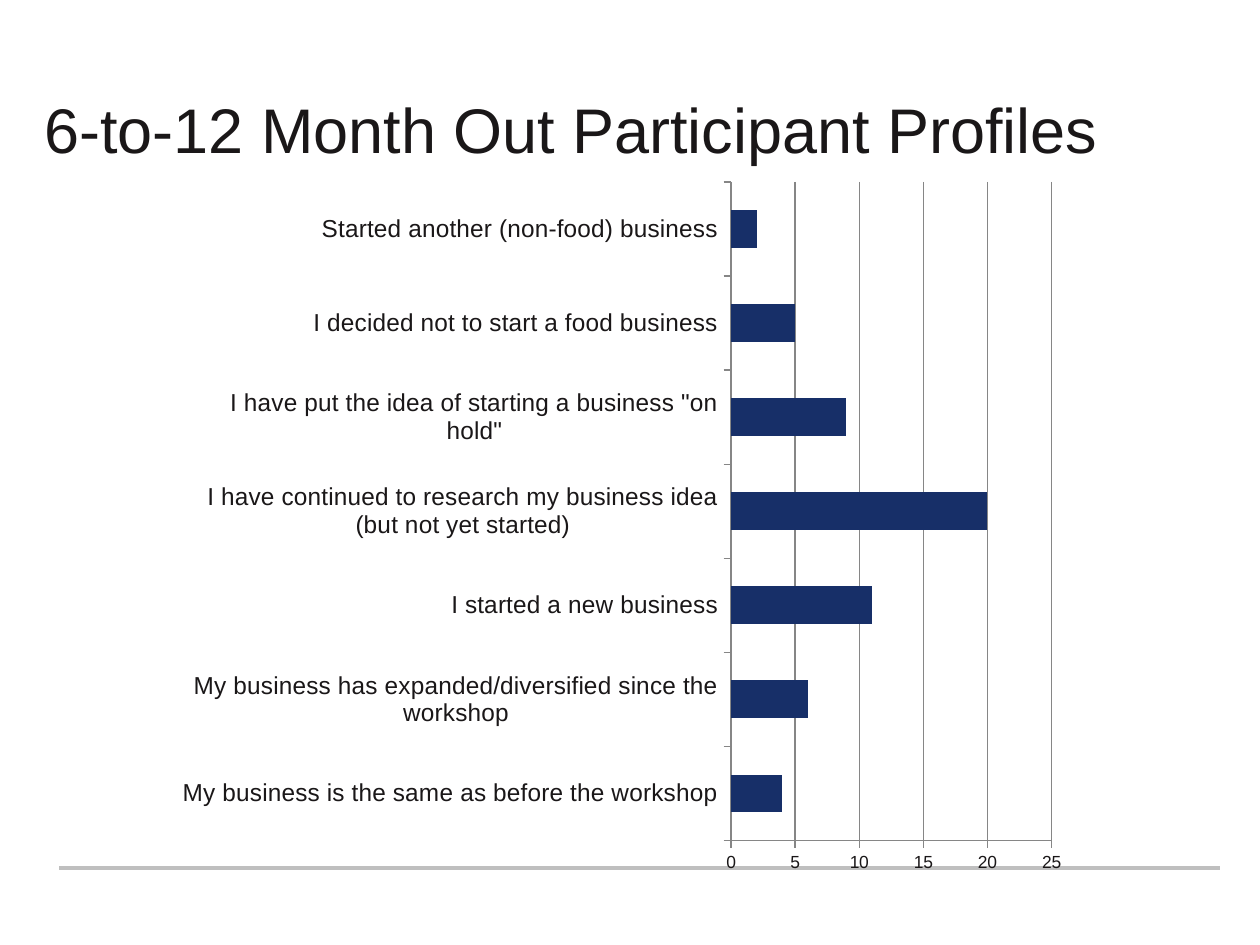
from lxml import etree
from pptx import Presentation
from pptx.chart.data import CategoryChartData
from pptx.dml.color import RGBColor
from pptx.enum.chart import XL_CHART_TYPE as ChartType, XL_TICK_MARK as TickMark
from pptx.enum.shapes import MSO_CONNECTOR as Connector
from pptx.oxml import parse_xml
from pptx.oxml.ns import nsdecls, qn
from pptx.util import Cm, Pt

INK = RGBColor(0x1A, 0x17, 0x18)
NAVY = RGBColor(0x17, 0x2F, 0x68)
RULE_GRAY = RGBColor(0xBF, 0xBF, 0xBF)
AXIS_GRAY = RGBColor(0x86, 0x86, 0x86)
FONT = "Arial"

PROFILES = [
    ("My business is the same as before the workshop", 4),
    ("My business has expanded/diversified since the workshop", 6),
    ("I started a new business", 11),
    ("I have continued to research my business idea (but not yet started)", 20),
    ('I have put the idea of starting a business "on hold"', 9),
    ("I decided not to start a food business", 5),
    ("Started another (non-food) business", 2),
]


def style_font(font, size):
    font.name = FONT
    font.size = Pt(size)
    font.bold = False
    font.color.rgb = INK


def style_line(line, color, width):
    line.color.rgb = color
    line.width = Pt(width)


def add_rule(slide):
    rule = slide.shapes.add_connector(
        Connector.STRAIGHT, Cm(1.19), Cm(17.5), Cm(24.59), Cm(17.5))
    style_line(rule.line, RULE_GRAY, 2.25)
    etree.SubElement(rule._element.spPr, qn("a:effectLst"))


def add_title(slide, text):
    box = slide.shapes.add_textbox(Cm(0.64), Cm(1.7), Cm(24.76), Cm(1.8))
    box.text_frame.word_wrap = True
    box.text_frame.text = text
    style_font(box.text_frame.paragraphs[0].runs[0].font, 36)


def set_plot_area(chart, x, y, width, height):
    """Fix the inner plot area, in fractions of the chart."""
    plot_area = chart._chartSpace.chart.plotArea
    for layout in plot_area.findall(qn("c:layout")):
        plot_area.remove(layout)
    plot_area.insert(0, parse_xml(
        f'<c:layout {nsdecls("c")}><c:manualLayout>'
        '<c:layoutTarget val="inner"/><c:xMode val="edge"/><c:yMode val="edge"/>'
        f'<c:x val="{x}"/><c:y val="{y}"/><c:w val="{width}"/><c:h val="{height}"/>'
        '</c:manualLayout></c:layout>'))


def style_axis(axis, size):
    axis.major_tick_mark = TickMark.OUTSIDE
    axis.minor_tick_mark = TickMark.NONE
    style_line(axis.format.line, AXIS_GRAY, 0.75)
    style_font(axis.tick_labels.font, size)


def add_profile_chart(slide):
    data = CategoryChartData()
    data.categories = [label for label, _ in PROFILES]
    data.add_series("Series 1", [count for _, count in PROFILES])
    chart = slide.shapes.add_chart(
        ChartType.BAR_CLUSTERED, Cm(3.68), Cm(3.38), Cm(18.06), Cm(14.43), data).chart
    chart.has_legend = False
    chart.has_title = False
    style_font(chart.font, 10)
    set_plot_area(chart, 0.61, 0.02, 0.36, 0.92)

    # Axes and gridlines
    style_axis(chart.category_axis, 14)
    value_axis = chart.value_axis
    style_axis(value_axis, 10)
    value_axis.minimum_scale, value_axis.maximum_scale = 0, 25
    value_axis.major_unit = 5
    value_axis.has_major_gridlines = True
    style_line(value_axis.major_gridlines.format.line, AXIS_GRAY, 0.75)

    # Bars
    plot = chart.plots[0]
    plot.gap_width = 150
    plot.vary_by_categories = False
    fill = plot.series[0].format.fill
    fill.solid()
    fill.fore_color.rgb = NAVY


def main():
    presentation = Presentation()
    presentation.slide_width, presentation.slide_height = Cm(25.4), Cm(19.05)
    slide = presentation.slides.add_slide(presentation.slide_layouts[6])
    add_rule(slide)
    add_title(slide, "6-to-12 Month Out Participant Profiles")
    add_profile_chart(slide)
    presentation.save("out.pptx")


if __name__ == "__main__":
    main()
